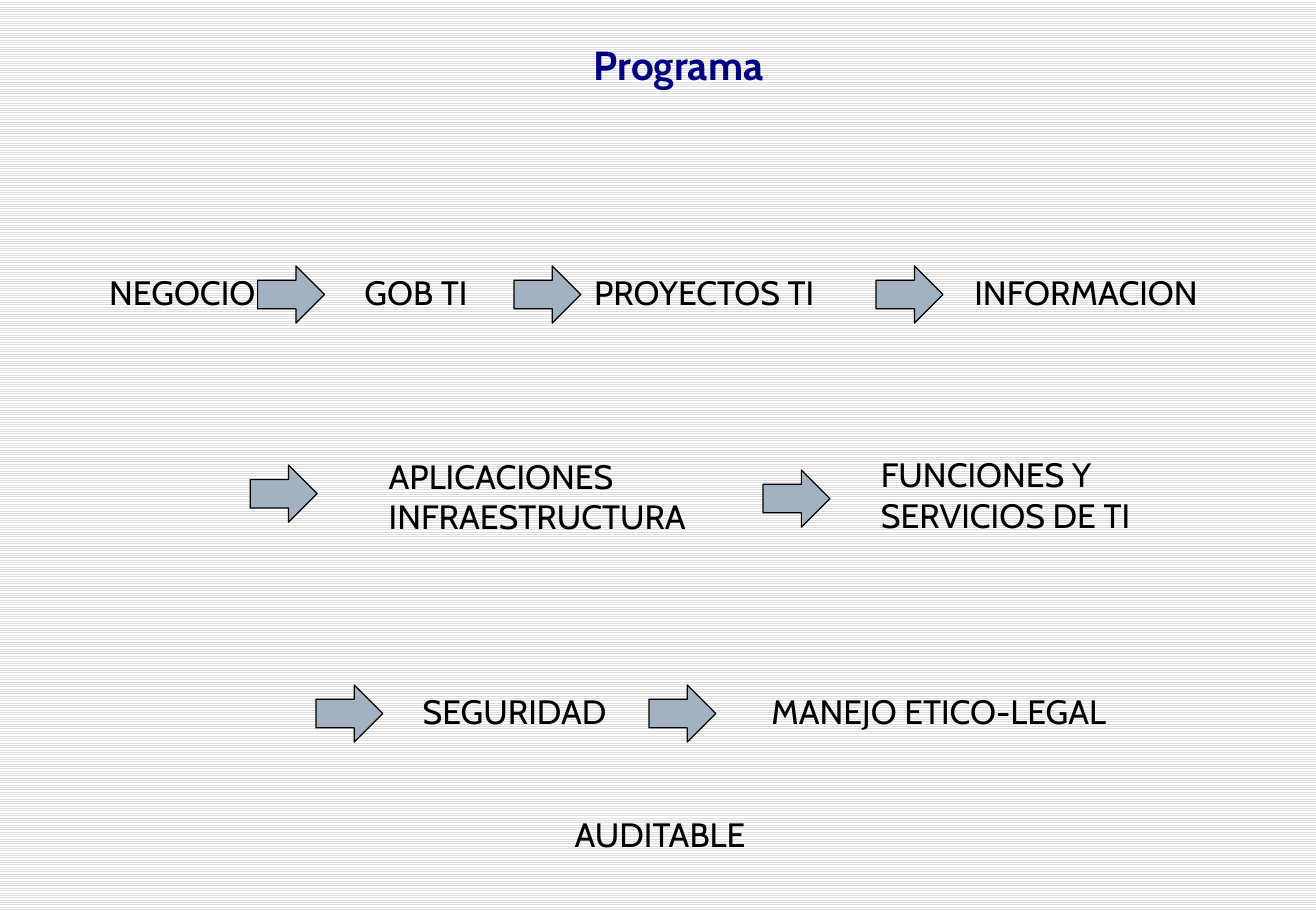
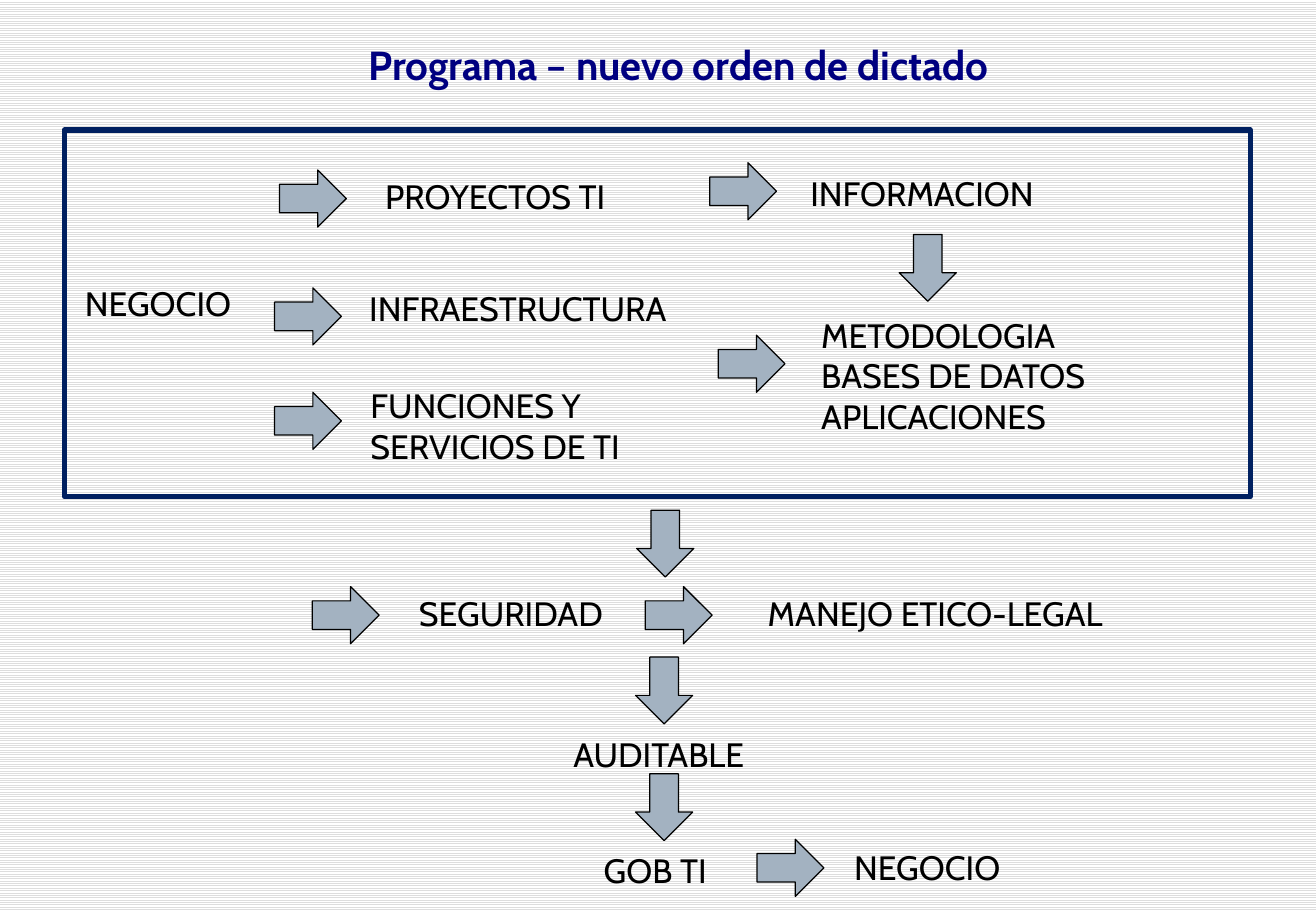
from pptx import Presentation
from pptx.util import Inches, Pt
from pptx.dml.color import RGBColor
from pptx.enum import dml, shapes, text

FONT = "Cabin"
INK, NAVY, FRAME, STEEL, STRIPE, WHITE = (
    "000000", "000080", "002060", "A3B2C1", "DDDDDD", "FFFFFF")
ARROW = (0.55, 0.47)
TURNS = {"→": 0, "↓": 90}
# Label: width and number of lines
SIZES = {
    "NEGOCIO": (1.41, 1),
    "GOB TI": (1.41, 1),
    "PROYECTOS TI": (2.42, 1),
    "INFORMACION": (2.11, 1),
    "APLICACIONES INFRAESTRUCTURA": (2.69, 2),
    "INFRAESTRUCTURA": (2.69, 1),
    "FUNCIONES Y SERVICIOS DE TI": (2.52, 2),
    "METODOLOGIA BASES DE DATOS\nAPLICACIONES": (2.61, 3),
    "SEGURIDAD": (2.5, 1),
    "MANEJO ETICO-LEGAL": (3.27, 1),
    "AUDITABLE": (1.93, 1),
}


def paint(color, code):
    color.rgb = RGBColor.from_string(code)


def write(slide, box, words, size=20, code=INK, bold=False, align=text.PP_ALIGN.LEFT):
    frame = slide.shapes.add_textbox(*map(Inches, box)).text_frame
    frame.word_wrap = True
    frame.text = words
    for para in frame.paragraphs:
        para.alignment = align
        para.font.name, para.font.size, para.font.bold = FONT, Pt(size), bold
        paint(para.font.color, code)


def draw(slide, kind, box, line, weight, fill=None):
    shape = slide.shapes.add_shape(kind, *map(Inches, box))
    shape.shadow.inherit = False
    if fill:
        shape.fill.solid()
        paint(shape.fill.fore_color, fill)
    else:
        shape.fill.background()
    paint(shape.line.color, line)
    shape.line.width = Pt(weight)
    return shape


def start(deck, title):
    """Striped slide with its centred title."""
    slide = deck.slides.add_slide(deck.slide_layouts[6])
    fill = slide.background.fill
    fill.patterned()
    fill.pattern = dml.MSO_PATTERN.LIGHT_HORIZONTAL
    paint(fill.fore_color, STRIPE)
    paint(fill.back_color, WHITE)
    write(slide, (0.72, 0.28, 9.73, 0.5), title, 24, NAVY, True, text.PP_ALIGN.CENTER)
    return slide


def flow(slide, left, top, steps):
    """Labels and arrows, each at an offset from the region's corner."""
    for name, dx, dy in steps:
        x, y = left + dx, top + dy
        if name in TURNS:
            kind = shapes.MSO_SHAPE.RIGHT_ARROW
            draw(slide, kind, (x, y, *ARROW), INK, 0.75, STEEL).rotation = TURNS[name]
        else:
            width, lines = SIZES[name]
            write(slide, (x, y, width, 0.1 + 0.335 * lines), name)


def closing(slide, left, top):
    """Security and ethics row, common to both slides."""
    flow(slide, left, top, [
        ("→", 0, 0), ("SEGURIDAD", 0.78, 0),
        ("→", 2.74, 0), ("MANEJO ETICO-LEGAL", 3.65, 0)])


def program(deck):
    slide = start(deck, "Programa")
    # Business to information
    flow(slide, 0.8, 2.19, [
        ("NEGOCIO", 0, 0), ("→", 1.32, 0), ("GOB TI", 2.1, 0), ("→", 3.43, 0),
        ("PROYECTOS TI", 3.99, 0), ("→", 6.41, 0), ("INFORMACION", 7.12, 0)])
    # Applications and services
    flow(slide, 2.06, 3.69, [
        ("→", 0, 0.14), ("APLICACIONES INFRAESTRUCTURA", 1.04, 0.01),
        ("→", 4.22, 0.18), ("FUNCIONES Y SERVICIOS DE TI", 5.09, 0)])
    closing(slide, 2.6, 5.64)
    flow(slide, 4.63, 6.65, [("AUDITABLE", 0, 0)])


def core(slide, left, top, width, height):
    """Framed group of topics."""
    draw(slide, shapes.MSO_SHAPE.RECTANGLE, (left, top, width, height), FRAME, 3)
    flow(slide, left, top, [
        ("NEGOCIO", 0.07, 1.21),
        ("→", 1.77, 0.33), ("PROYECTOS TI", 2.54, 0.33),
        ("→", 1.73, 1.3), ("INFRAESTRUCTURA", 2.41, 1.25),
        ("→", 1.73, 2.16), ("FUNCIONES Y SERVICIOS DE TI", 2.42, 2.05),
        ("→", 5.31, 0.27), ("INFORMACION", 6.04, 0.3), ("↓", 6.83, 0.9),
        ("→", 5.38, 1.69),
        ("METODOLOGIA BASES DE DATOS\nAPLICACIONES", 6.13, 1.47)])


def order(deck):
    slide = start(deck, "Programa – nuevo orden de dictado")
    core(slide, 0.53, 1.07, 9.76, 3.02)
    closing(slide, 2.57, 4.83)
    # Descent to governance and back to business
    flow(slide, 4.62, 4.24, [
        ("↓", 0.58, 0), ("↓", 0.57, 1.21), ("AUDITABLE", 0, 1.75),
        ("↓", 0.57, 2.17), ("GOB TI", 0.25, 2.71),
        ("→", 1.61, 2.67), ("NEGOCIO", 2.31, 2.68)])


def main():
    deck = Presentation()
    deck.slide_width, deck.slide_height = Inches(10.83), Inches(7.5)
    program(deck)
    order(deck)
    deck.save("out.pptx")


if __name__ == "__main__":
    main()
